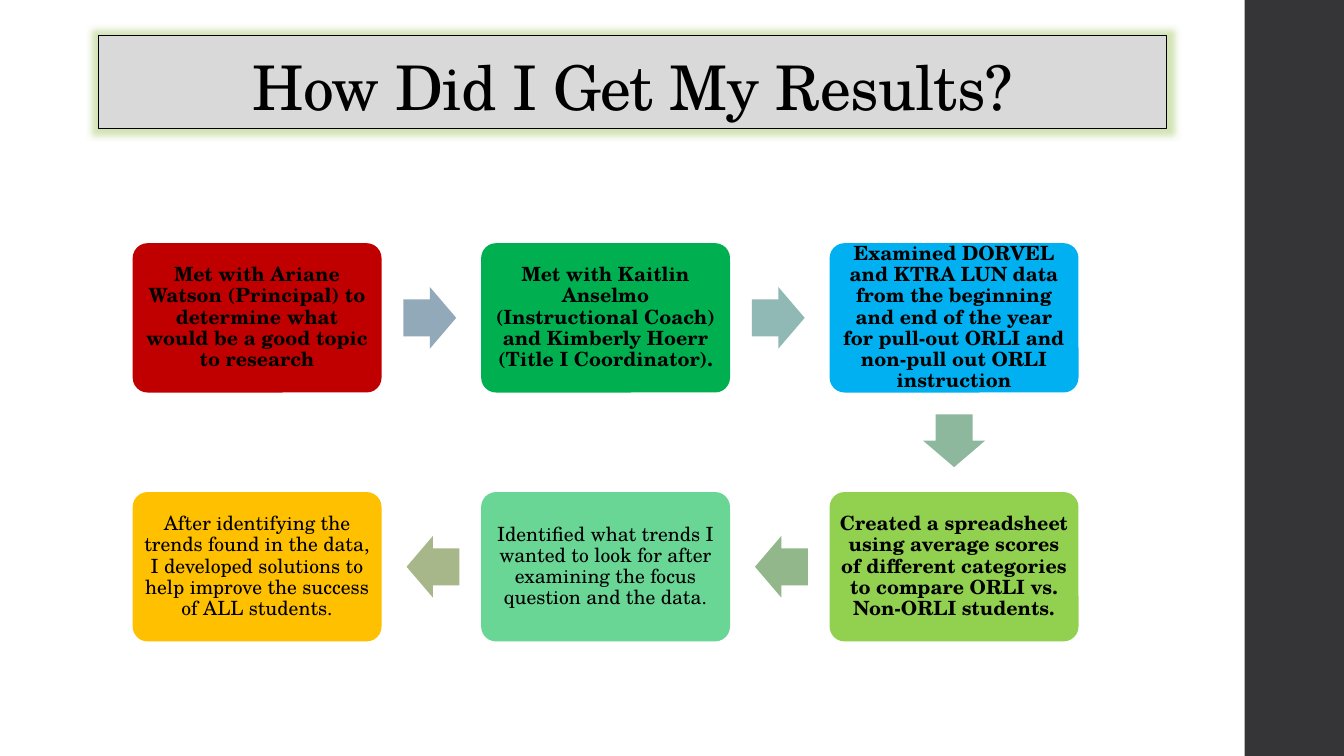
from pptx import Presentation
from pptx.dml.color import RGBColor
from pptx.enum.shapes import MSO_SHAPE
from pptx.enum.text import MSO_ANCHOR, MSO_AUTO_SIZE, PP_ALIGN
from pptx.oxml import parse_xml
from pptx.util import Pt

RECT = MSO_SHAPE.RECTANGLE
ROUNDED = MSO_SHAPE.ROUNDED_RECTANGLE
ARROW = MSO_SHAPE.RIGHT_ARROW
CENTER = PP_ALIGN.CENTER
MIDDLE, BOTTOM = MSO_ANCHOR.MIDDLE, MSO_ANCHOR.BOTTOM
NO_AUTOFIT = MSO_AUTO_SIZE.NONE
FONT = "TeX Gyre Schola"
NS = "http://schemas.openxmlformats.org/drawingml/2006/main"


def paint(color_format, hex_color):
    color_format.rgb = RGBColor.from_string(hex_color)


def add_block(kind, x, y, w, h, hex_color):
    sp = s.shapes.add_shape(kind, Pt(x), Pt(y), Pt(w), Pt(h))
    sp.shadow.inherit = False
    sp.fill.solid()
    paint(sp.fill.fore_color, hex_color)
    sp.line.fill.background()
    return sp


prs = Presentation()
prs.slide_width, prs.slide_height = Pt(960), Pt(540)
s = prs.slides.add_slide(prs.slide_layouts[5])

add_block(RECT, 889, 0, 71, 540, "353537")

title = s.shapes.title
title.left, title.top, title.width, title.height = Pt(70.3), Pt(25.6), Pt(763), Pt(66.2)
title.fill.solid()
paint(title.fill.fore_color, "D9D9D9")
paint(title.line.color, "000000")
title.line.width = Pt(0.75)
title._element.spPr.append(parse_xml(
    f'<a:effectLst xmlns:a="{NS}"><a:glow rad="127000"><a:srgbClr val="92BC4A">'
    '<a:alpha val="40000"/></a:srgbClr></a:glow></a:effectLst>'))
tf = title.text_frame
tf.auto_size = NO_AUTOFIT
tf.word_wrap = True
tf.vertical_anchor = BOTTOM
p = tf.paragraphs[0]
p.alignment = CENTER
p.line_spacing = 0.9
r = p.add_run()
r.text = "How Did I Get My Results?"
r.font.name = FONT
r.font.size = Pt(44)
paint(r.font.color, "000000")
r.font._element.set("spc", "-50")

BOX_W, BOX_H = 177.8, 106.7
LEFT, TOP = 94.8, 173.7
COL_STEP, ROW_STEP = 248.9, 177.8
ARROW_W, ARROW_H = 37.7, 44.1
ARROW_SHIFT = 1.1

steps = [
    (0, 0, "C00000", True, "Met with Ariane Watson (Principal) to determine what would be "
     "a good topic to research"),
    (1, 0, "00B050", True, "Met with Kaitlin Anselmo (Instructional Coach) and Kimberly Hoerr "
     "(Title I Coordinator)."),
    (2, 0, "00B0F0", True, "Examined DORVEL and KTRA LUN data from the beginning and end of the "
     "year for pull-out ORLI and non-pull out ORLI instruction"),
    (2, 1, "92D050", True, "Created a spreadsheet using average scores of different categories "
     "to compare ORLI vs. Non-ORLI students."),
    (1, 1, "6AD696", False, "Identified what trends I wanted to look for after examining the "
     "focus question and the data."),
    (0, 1, "FFC000", False, "After identifying the trends found in the data, I developed "
     "solutions to help improve the success of ALL students."),
]

for col, row, color, bold, text in steps:
    sp = add_block(ROUNDED, LEFT + col * COL_STEP, TOP + row * ROW_STEP, BOX_W, BOX_H, color)
    sp.adjustments[0] = 0.1
    tf = sp.text_frame
    tf.word_wrap = True
    tf.vertical_anchor = MIDDLE
    tf.margin_left = tf.margin_right = tf.margin_top = tf.margin_bottom = Pt(4.2)
    p = tf.paragraphs[0]
    p.text = text
    p.alignment = CENTER
    p.line_spacing = 0.9
    p.font.name = FONT
    p.font.size = Pt(14)
    p.font.bold = bold
    paint(p.font.color, "000000")

arrow_colors = ["92A9B9", "90B8B4", "8EB89E", "91B78B", "A7B789"]
for start, end, color in zip(steps, steps[1:], arrow_colors):
    dx, dy = end[0] - start[0], end[1] - start[1]
    cx = LEFT + BOX_W / 2 + (start[0] + dx / 2) * COL_STEP - dx * ARROW_SHIFT
    cy = TOP + BOX_H / 2 + (start[1] + dy / 2) * ROW_STEP - dy * ARROW_SHIFT
    sp = add_block(ARROW, cx - ARROW_W / 2, cy - ARROW_H / 2, ARROW_W, ARROW_H, color)
    sp.adjustments[0] = 0.6
    sp.adjustments[1] = 0.5
    sp.rotation = 90 if dy else 90 - 90 * dx

prs.save("out.pptx")
